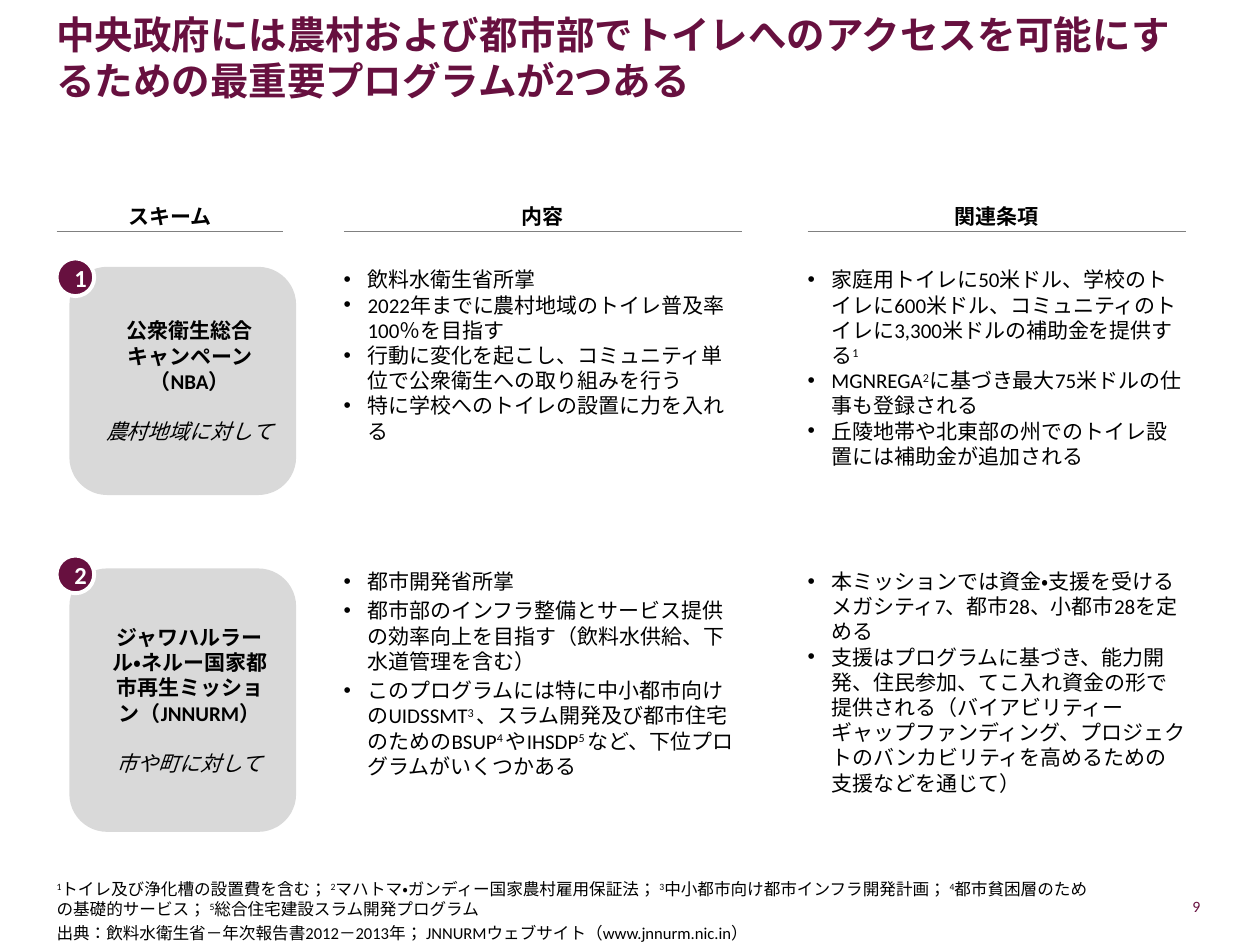
from lxml.etree import SubElement
from pptx import Presentation
from pptx.dml.color import RGBColor
from pptx.enum.lang import MSO_LANGUAGE_ID
from pptx.enum.shapes import MSO_CONNECTOR, MSO_SHAPE
from pptx.enum.text import MSO_ANCHOR, MSO_AUTO_SIZE, PP_ALIGN
from pptx.oxml.ns import qn
from pptx.util import Cm, Pt

PLUM, GREY, RULE, BLACK, WHITE = "67103F", "D9D9D9", "808080", "000000", "FFFFFF"


def paint(fill, color):
    fill.solid()
    fill.fore_color.rgb = RGBColor.from_string(color)


def write_text(frame, *texts, size=12, color=BLACK, bold=False, align=PP_ALIGN.LEFT,
               anchor=MSO_ANCHOR.TOP, margins=(0, 0), indent=0, bullet=False, gap=0):
    """Write one paragraph per text; parts between ^ marks are superscript."""
    frame.word_wrap = True
    frame.auto_size = MSO_AUTO_SIZE.NONE
    frame.vertical_anchor = anchor
    frame.margin_left = frame.margin_right = Cm(margins[0])
    frame.margin_top = frame.margin_bottom = Cm(margins[1])
    for number, text in enumerate(texts):
        paragraph = frame.add_paragraph() if number else frame.paragraphs[0]
        paragraph.alignment = align
        paragraph.space_before = Pt(gap if number else 0)
        properties = paragraph._p.get_or_add_pPr()
        properties.set("marL", str(Cm(indent)))
        properties.set("indent", str(-Cm(indent) if bullet else 0))
        if bullet:
            SubElement(properties, qn("a:buFont"), typeface="Arial")
            SubElement(properties, qn("a:buChar"), char="•")
        for position, part in enumerate(text.split("^")):
            if not part:
                continue
            run = paragraph.add_run()
            run.text = part
            run.font.name = "Calibri"
            run.font.size = Pt(size)
            run.font.bold = bold
            run.font.language_id = MSO_LANGUAGE_ID.JAPANESE
            paint(run.font.fill, color)
            if position % 2:
                run._r.get_or_add_rPr().set("baseline", "30000")


presentation = Presentation()
presentation.slide_width, presentation.slide_height = Cm(25.4), Cm(19.05)
slide = presentation.slides.add_slide(presentation.slide_layouts[5])
shapes = slide.shapes

title = shapes.title
title.left, title.top, title.width, title.height = Cm(1.14), Cm(0.38), Cm(23.09), Cm(1.7)
write_text(title.text_frame,
           "中央政府には農村および都市部でトイレへのアクセスを可能にするための最重要プログラムが2つある",
           size=22, color=PLUM, bold=True, anchor=MSO_ANCHOR.BOTTOM)

# Column headings, each with a rule below
columns = [("スキーム", 1.14, 4.57), ("内容", 6.93, 8.03), ("関連条項", 16.28, 7.62)]
for heading, left, width in columns:
    box = shapes.add_textbox(Cm(left), Cm(4.06), Cm(width), Cm(0.56))
    write_text(box.text_frame, heading, bold=True, align=PP_ALIGN.CENTER,
               anchor=MSO_ANCHOR.BOTTOM)
    rule = shapes.add_connector(MSO_CONNECTOR.STRAIGHT, Cm(left), Cm(4.67),
                                Cm(left + width), Cm(4.67))
    paint(rule.line.fill, RULE)
    rule.line.width = Pt(0.25)
    SubElement(rule._element.spPr, qn("a:effectLst"))

# One row per programme: card, number badge, two bulleted columns
programmes = [
    dict(
        top=5.38, height=4.6, badge_top=5.21, content_gap=0,
        name="公衆衛生総合キャンペーン（NBA）", area="農村地域に対して",
        content=["飲料水衛生省所掌",
                 "2022年までに農村地域のトイレ普及率100％を目指す",
                 "行動に変化を起こし、コミュニティ単位で公衆衛生への取り組みを行う",
                 "特に学校へのトイレの設置に力を入れる"],
        provisions=["家庭用トイレに50米ドル、学校のトイレに600米ドル、"
                    "コミュニティのトイレに3,300米ドルの補助金を提供する^1^",
                    "MGNREGA^2^に基づき最大75米ドルの仕事も登録される",
                    "丘陵地帯や北東部の州でのトイレ設置には補助金が追加される"]),
    dict(
        top=11.46, height=5.31, badge_top=11.2, content_gap=2.4,
        name="ジャワハルラール・ネルー国家都市再生ミッション（JNNURM）", area="市や町に対して",
        content=["都市開発省所掌",
                 "都市部のインフラ整備とサービス提供の効率向上を目指す（飲料水供給、下水道管理を含む）",
                 "このプログラムには特に中小都市向けのUIDSSMT^3 ^、スラム開発及び都市住宅のための"
                 "BSUP^4 ^やIHSDP^5 ^など、下位プログラムがいくつかある"],
        provisions=["本ミッションでは資金・支援を受けるメガシティ7、都市28、小都市28を定める",
                    "支援はプログラムに基づき、能力開発、住民参加、てこ入れ資金の形で提供される"
                    "（バイアビリティーギャップファンディング、プロジェクトのバンカビリティを"
                    "高めるための支援などを通じて）"]),
]
for number, programme in enumerate(programmes, start=1):
    top, height = Cm(programme["top"]), Cm(programme["height"])
    card = shapes.add_shape(MSO_SHAPE.ROUNDED_RECTANGLE, Cm(1.4), top, Cm(4.57), height)
    card.shadow.inherit = False
    paint(card.fill, GREY)
    card.line.fill.background()
    write_text(card.text_frame, programme["name"], programme["area"], bold=True,
               align=PP_ALIGN.CENTER, anchor=MSO_ANCHOR.MIDDLE, margins=(0.23, 0.1),
               indent=0.28, gap=14.4)
    area_font = card.text_frame.paragraphs[1].runs[0].font
    area_font.bold, area_font.italic = False, True

    badge = shapes.add_shape(MSO_SHAPE.OVAL, Cm(1.14), Cm(programme["badge_top"]),
                             Cm(0.76), Cm(0.76))
    badge.shadow.inherit = False
    paint(badge.fill, PLUM)
    paint(badge.line.fill, WHITE)
    badge.line.width = Pt(2.25)
    write_text(badge.text_frame, str(number), size=14, color=WHITE, bold=True,
               align=PP_ALIGN.CENTER, anchor=MSO_ANCHOR.MIDDLE, margins=(0.25, 0.13))

    bulleted = [(programme["content"], programme["content_gap"]), (programme["provisions"], 0)]
    for (heading, left, width), (items, gap) in zip(columns[1:], bulleted):
        box = shapes.add_textbox(Cm(left), top, Cm(width), height)
        write_text(box.text_frame, *items, indent=0.48, bullet=True, gap=gap)

footnotes = shapes.add_textbox(Cm(1.14), Cm(17.3), Cm(20.96), Cm(1.7))
write_text(footnotes.text_frame,
           "^1^トイレ及び浄化槽の設置費を含む； ^2^マハトマ・ガンディー国家農村雇用保証法； "
           "^3^中小都市向け都市インフラ開発計画； ^4^都市貧困層のための基礎的サービス； "
           "^5^総合住宅建設スラム開発プログラム",
           "出典：飲料水衛生省－年次報告書2012－2013年； JNNURMウェブサイト（www.jnnurm.nic.in）",
           size=9.5, anchor=MSO_ANCHOR.BOTTOM, gap=1.9)

page_number = shapes.add_textbox(Cm(22.35), Cm(17.86), Cm(1.85), Cm(0.81))
write_text(page_number.text_frame, "9", size=9, color=PLUM, align=PP_ALIGN.RIGHT,
           anchor=MSO_ANCHOR.MIDDLE)

presentation.save("out.pptx")
